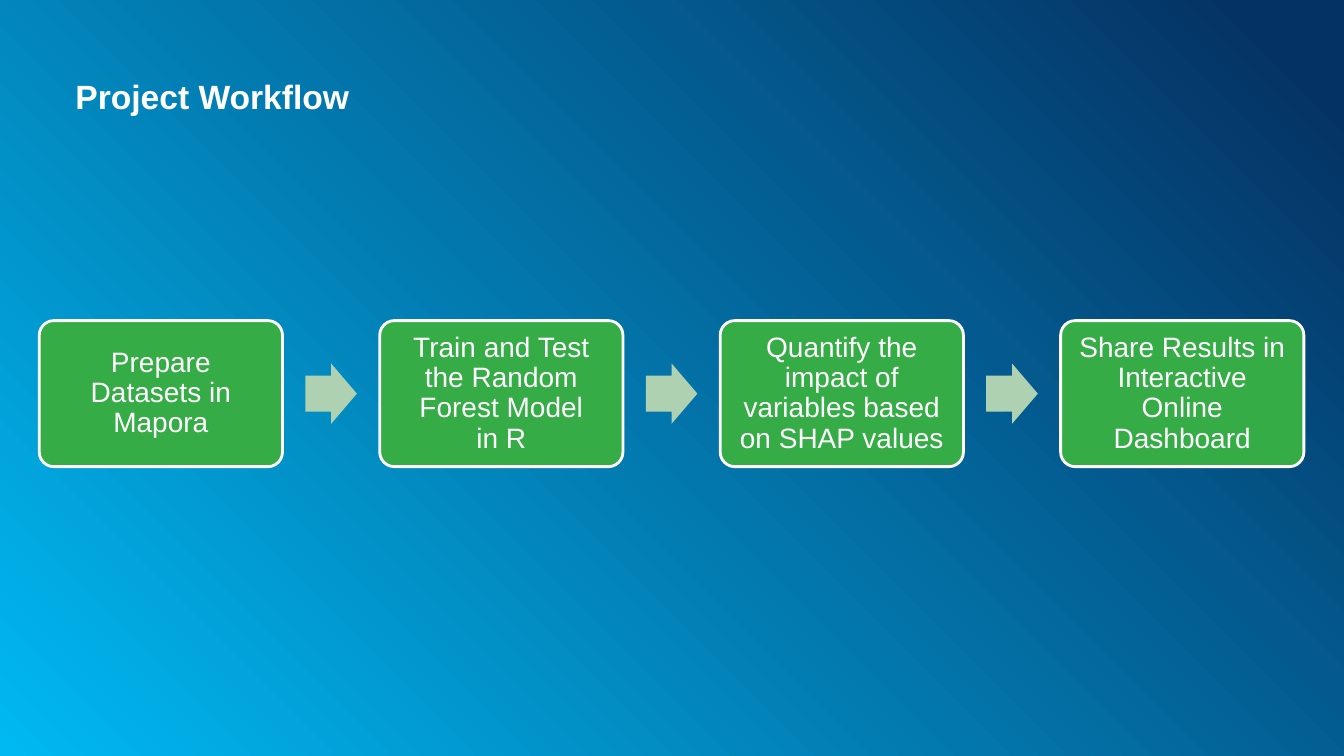
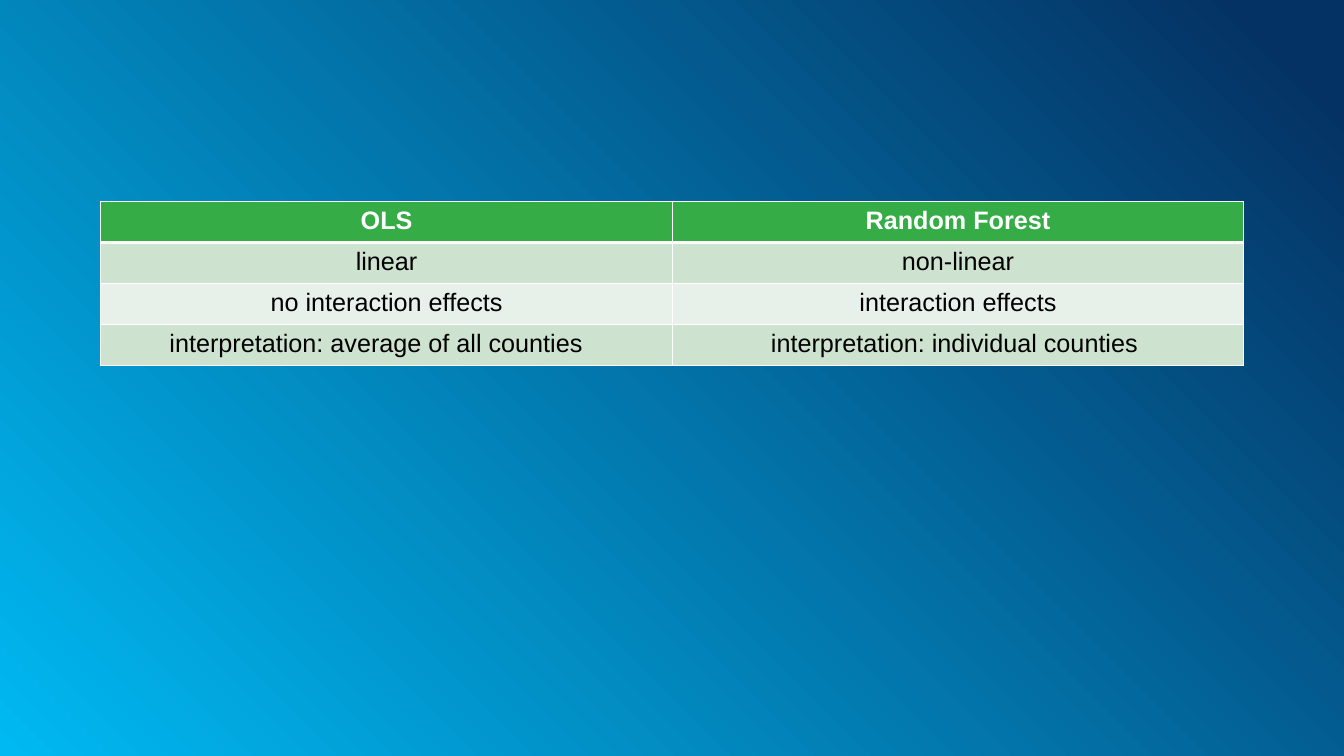
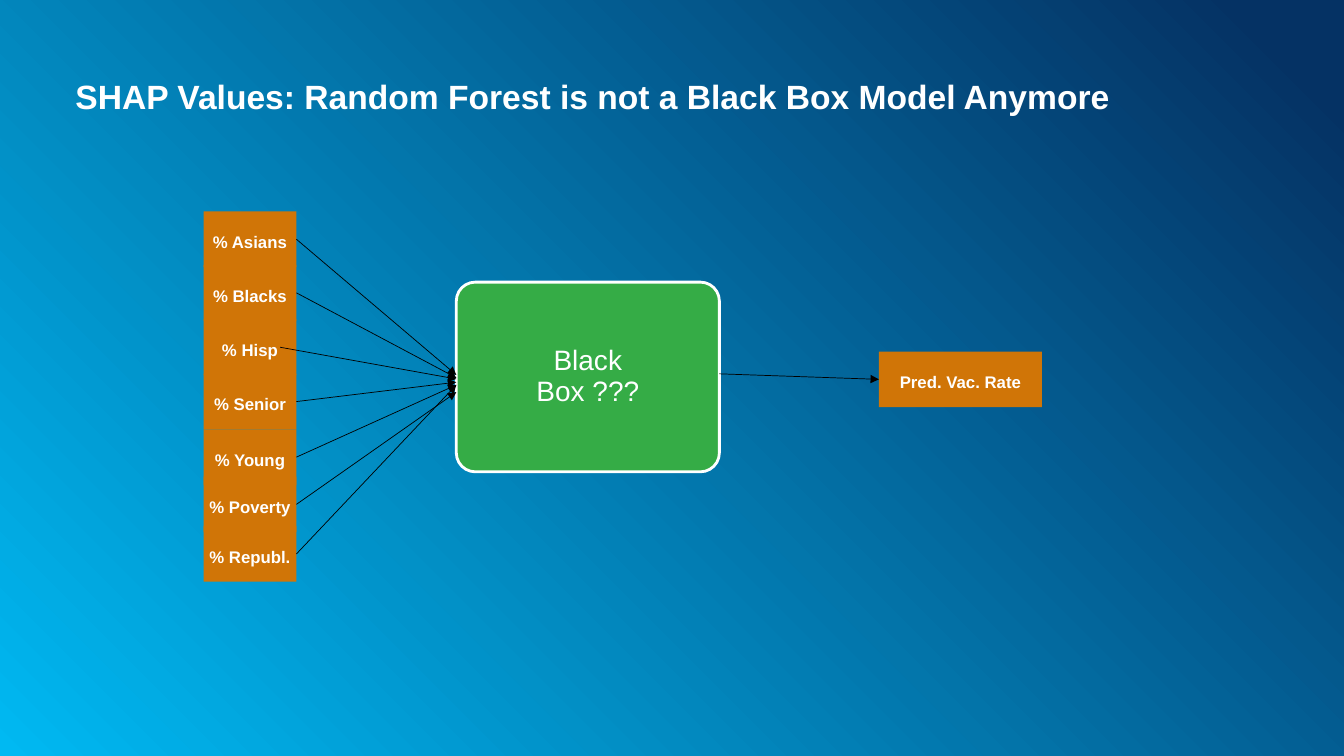
"""Build three slides on a random forest project: workflow, comparison, black box."""
from dataclasses import dataclass

from lxml.etree import SubElement
from pptx import Presentation
from pptx.dml.color import RGBColor
from pptx.enum.shapes import MSO_CONNECTOR, MSO_SHAPE
from pptx.enum.text import MSO_ANCHOR, PP_ALIGN
from pptx.oxml import parse_xml
from pptx.oxml.ns import nsdecls, qn
from pptx.util import Cm, Pt


@dataclass(frozen=True)
class Theme:
    """Colours, font and type sizes."""
    font: str = "Arial"
    white: str = "FFFFFF"
    black: str = "000000"
    green: str = "35AC46"
    pale: str = "AED2B1"
    orange: str = "D07507"
    sky: str = "00B9F2"
    navy: str = "053264"
    bands: tuple = ("E8F1E9", "CEE3CF")
    head: int = 24
    step: int = 20
    cell: int = 18
    tag: int = 12


LOOK = Theme()

FLOW = {
    "title": "Project Workflow",
    "steps": [
        "Prepare Datasets in Mapora",
        "Train and Test the Random Forest Model\vin R",
        "Quantify the impact of variables based on SHAP values",
        "Share Results in Interactive Online Dashboard",
    ],
}
ROWS = [
    ("OLS", "Random Forest"),
    ("linear", "non-linear"),
    ("no interaction effects", "interaction effects"),
    ("interpretation: average of all counties", "interpretation: individual counties"),
]
PADS = {(3, 0): 0.53, (3, 1): 0.18}
MODEL = {
    "title": "SHAP Values: Random Forest is not a Black Box Model Anymore",
    "box": "Black\vBox ???",
    "result": "Pred. Vac. Rate",
    "inputs": [
        ("% Asians", 5.33, 9.45),
        ("% Blacks", 6.68, 9.52),
        ("% Hisp", 8.05, 9.55),
        ("% Senior", 9.42, 9.63),
        ("% Young", 10.82, 9.7),
        ("% Poverty", 12.01, 9.88),
        ("% Republ.", 13.26, 9.7),
    ],
}
SHORT = "% Hisp"


def tint(name):
    return RGBColor.from_string(name)


def write(frame, text, size, color=LOOK.white, bold=False, align=PP_ALIGN.CENTER, space=None):
    frame.text = text
    para = frame.paragraphs[0]
    para.alignment = align
    para.line_spacing = space
    font = para.font
    font.name, font.size, font.bold = LOOK.font, Pt(size), bold
    font.color.rgb = tint(color)


def inset(frame, gap):
    frame.margin_left = frame.margin_right = Cm(gap)
    frame.margin_top = frame.margin_bottom = Cm(gap)


def draw(slide, kind, place, fill, edge=None):
    shape = slide.shapes.add_shape(kind, *map(Cm, place))
    shape.shadow.inherit = False
    shape.fill.solid()
    shape.fill.fore_color.rgb = tint(fill)
    if edge:
        shape.line.color.rgb = tint(edge)
        shape.line.width = Pt(2)
    else:
        shape.line.fill.background()
    return shape


def panel(slide, text, place, gap):
    shape = draw(slide, MSO_SHAPE.ROUNDED_RECTANGLE, place, LOOK.green, LOOK.white)
    shape.adjustments[0] = 0.1
    frame = shape.text_frame
    frame.word_wrap = True
    frame.vertical_anchor = MSO_ANCHOR.MIDDLE
    inset(frame, gap)
    write(frame, text, LOOK.step, space=0.9)
    return shape


def label(slide, text, place):
    shape = draw(slide, MSO_SHAPE.RECTANGLE, place, LOOK.orange)
    frame = shape.text_frame
    frame.word_wrap = False
    frame.vertical_anchor = MSO_ANCHOR.MIDDLE
    inset(frame, 0)
    write(frame, text, LOOK.tag, bold=True, space=Pt(18))
    return shape


def arrow(slide, start, end):
    line = slide.shapes.add_connector(MSO_CONNECTOR.STRAIGHT, *map(Cm, start + end))
    line.line.color.rgb = tint(LOOK.black)
    line.line.width = Pt(0.5)
    SubElement(line.line._get_or_add_ln(), qn("a:tailEnd"), type="triangle")
    SubElement(line._element.spPr, qn("a:effectLst"))
    return line


def title(slide, text):
    shape = slide.shapes.title
    shape.left, shape.top, shape.width, shape.height = map(Cm, (1.9, 1.9, 30.07, 1.02))
    frame = shape.text_frame
    frame.vertical_anchor = MSO_ANCHOR.TOP
    inset(frame, 0)
    write(frame, text, LOOK.head, bold=True, align=PP_ALIGN.LEFT)


def border(cell, sides):
    props = cell._tc.get_or_add_tcPr()
    for spot, (side, width) in enumerate(sides.items()):
        props.insert(spot, parse_xml(
            f'<a:ln{side} {nsdecls("a")} w="{Pt(width)}"><a:solidFill>'
            f'<a:srgbClr val="{LOOK.white}"/></a:solidFill></a:ln{side}>'))


def backdrop(master):
    fill = master.background.fill
    fill.gradient()
    old = master.background._cSld.find(".//" + qn("a:gradFill"))
    old.getparent().replace(old, parse_xml(
        f'<a:gradFill {nsdecls("a")} rotWithShape="1"><a:gsLst>'
        f'<a:gs pos="0"><a:srgbClr val="{LOOK.sky}"/></a:gs>'
        f'<a:gs pos="95000"><a:srgbClr val="{LOOK.navy}"/></a:gs></a:gsLst>'
        '<a:path path="circle"><a:fillToRect t="100000" r="100000"/></a:path></a:gradFill>'))


def workflow(slide):
    title(slide, FLOW["title"])
    left, top, wide, high, pitch = 0.99, 8.08, 6.13, 3.68, 8.58
    long, tall = 1.3, 1.52
    for spot, text in enumerate(FLOW["steps"]):
        x = left + spot * pitch
        if spot:
            mid = x - (pitch - wide) / 2
            place = (mid - long / 2, top + (high - tall) / 2, long, tall)
            point = draw(slide, MSO_SHAPE.RIGHT_ARROW, place, LOOK.pale)
            point.adjustments[0], point.adjustments[1] = 0.6, 0.5
        panel(slide, text, (x, top, wide, high), 0.3)


def compare(slide):
    place = map(Cm, (2.54, 5.08, 28.8, 4.12))
    table = slide.shapes.add_table(len(ROWS), len(ROWS[0]), *place).table
    for row, texts in enumerate(ROWS):
        for col, text in enumerate(texts):
            cell = table.cell(row, col)
            head = row == 0
            cell.fill.solid()
            cell.fill.fore_color.rgb = tint(LOOK.green if head else LOOK.bands[row % 2])
            cell.margin_right = Cm(0.25 + PADS.get((row, col), 0))
            write(cell.text_frame, text, LOOK.cell, LOOK.white if head else LOOK.black, head)
            border(cell, {"L": 1, "R": 1, "T": 3 if row == 1 else 1, "B": 3 if head else 1})


def forest(slide):
    title(slide, MODEL["title"])
    left, wide, high = 5.13, 2.34, 1.4
    x, y, span, tall = 11.5, 7.11, 6.63, 4.78
    panel(slide, MODEL["box"], (x, y, span, tall), 0.33)
    tags = [label(slide, text, (left, top, wide, high)) for text, top, _ in MODEL["inputs"]]
    for tag, (text, top, end) in zip(tags, MODEL["inputs"]):
        short = text == SHORT
        start = (7.06 if short else left + wide, top + high / 2)
        line = arrow(slide, start, (x, end))
        if not short:
            line.begin_connect(tag, 3)
    goal = label(slide, MODEL["result"], (22.15, 8.86, 4.11, high))
    arrow(slide, (x + span, 9.42), (22.15, 9.56)).end_connect(goal, 1)


def main():
    deck = Presentation()
    deck.slide_width, deck.slide_height = Cm(33.87), Cm(19.05)
    backdrop(deck.slide_master)
    for build, kind in ((workflow, 5), (compare, 6), (forest, 5)):
        build(deck.slides.add_slide(deck.slide_layouts[kind]))
    deck.save("out.pptx")


if __name__ == "__main__":
    main()
